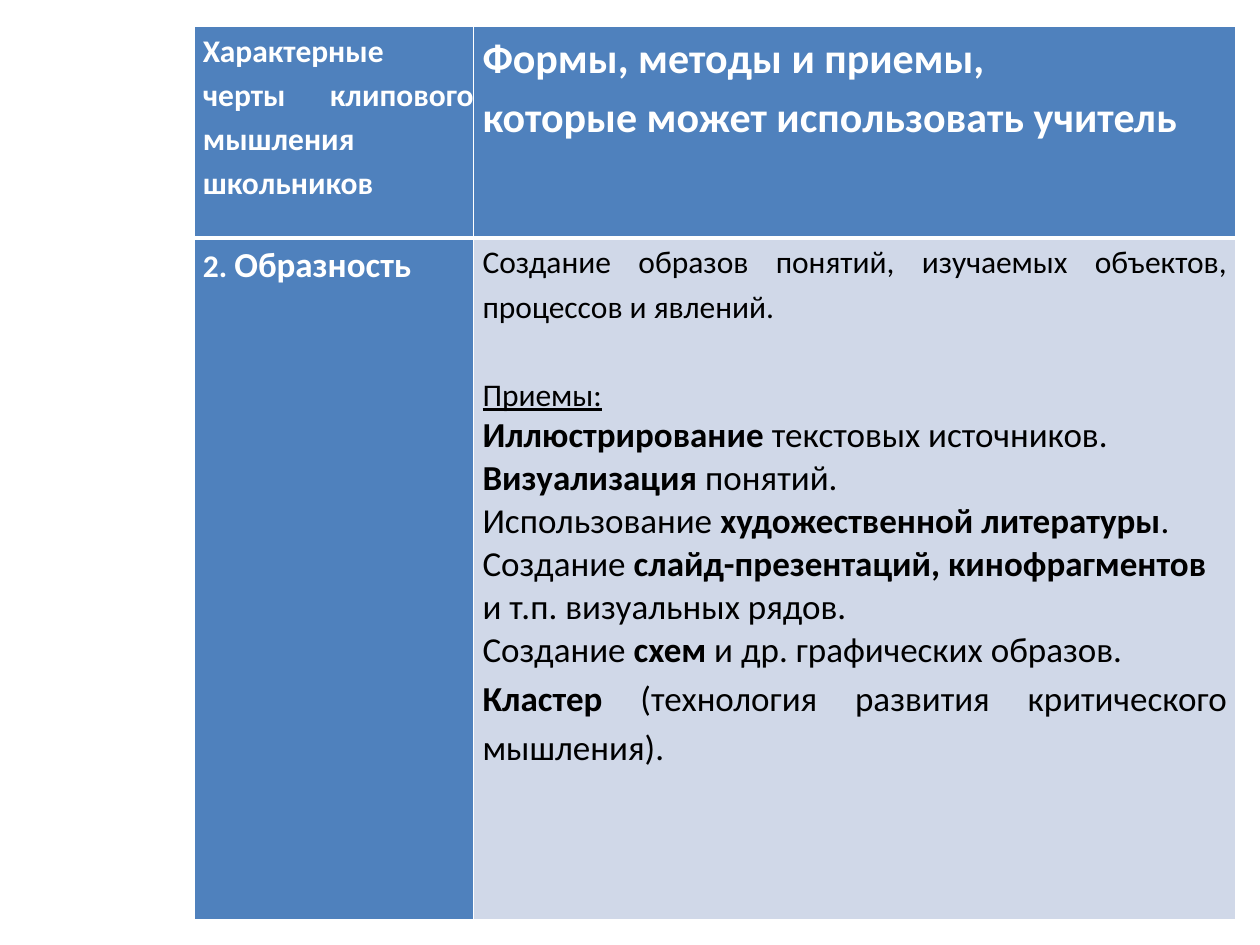
from lxml import etree
from pptx import Presentation
from pptx.dml.color import RGBColor
from pptx.enum import text
from pptx.oxml import ns
from pptx.util import Inches, Pt

BLUE, PALE, WHITE, BLACK = "4F81BD", "D0D8E8", "FFFFFF", "000000"
COLUMNS = (2.22, 6.05)
ROWS = (1.68, 5.41)


def rgb(value):
    return RGBColor.from_string(value)


def add_border(cell, side, width):
    """Draw one white cell edge; side is L, R, T or B."""
    line = etree.SubElement(cell._tc.get_or_add_tcPr(), ns.qn(f"a:ln{side}"),
                            w=str(Pt(width)))
    fill = etree.SubElement(line, ns.qn("a:solidFill"))
    etree.SubElement(fill, ns.qn("a:srgbClr"), val=WHITE)


def style_cell(cell, fill, right, top, bottom):
    for side, width in (("L", 1), ("R", 1), ("T", top), ("B", bottom)):
        add_border(cell, side, width)
    cell.fill.solid()
    cell.fill.fore_color.rgb = rgb(fill)
    cell.margin_left, cell.margin_right = Inches(0.07), Inches(right)
    cell.margin_top = cell.margin_bottom = 0


def add_run(paragraph, content, size=18, color=WHITE, bold=False, underline=False):
    run = paragraph.add_run()
    run.text = content
    font = run.font
    font.name, font.size = "Calibri", Pt(size)
    font.bold, font.underline = bold, underline
    font.color.rgb = rgb(color)


def write_paragraph(cell, *parts, justified=True, before=0, **style):
    """Write a paragraph of plain strings or (string, format) parts."""
    frame = cell.text_frame
    first = frame.paragraphs[0]
    paragraph = frame.add_paragraph() if first.runs else first
    if justified:
        paragraph.alignment = text.PP_ALIGN.JUSTIFY
        paragraph.line_spacing = 1.15
    if before:
        paragraph.space_before = Pt(before)
    for part in parts:
        content, extra = (part, {}) if isinstance(part, str) else part
        add_run(paragraph, content, **{**style, **extra})


def strong(content):
    return content, {"bold": True}


def add_grid(slide):
    table = slide.shapes.add_table(
        len(ROWS), len(COLUMNS), Inches(1.54), Inches(0.21),
        Inches(sum(COLUMNS)), Inches(sum(ROWS))).table
    for column, width in zip(table.columns, COLUMNS):
        column.width = Inches(width)
    for row, height in zip(table.rows, ROWS):
        row.height = Inches(height)
    for r in range(len(ROWS)):
        for c in range(len(COLUMNS)):
            style_cell(table.cell(r, c), PALE if r and c else BLUE,
                       right=0.07 if c else 0,
                       top=3 if r else 1, bottom=1 if r else 3)
    return table


def write_headings(table):
    write_paragraph(table.cell(0, 0),
                    "Характерные черты клипового мышления школьников", bold=True)
    for line in ("Формы, методы и приемы,", "которые может использовать учитель"):
        write_paragraph(table.cell(0, 1), line, size=24, bold=True)
    write_paragraph(table.cell(1, 0), "2. ", ("Образность", {"size": 20}), bold=True)


def write_methods(cell):
    write_paragraph(cell, "Создание образов понятий, изучаемых объектов, "
                    "процессов и явлений.", color=BLACK)
    # One line of space sets the techniques apart
    write_paragraph(cell, "Приемы:", before=25, color=BLACK, underline=True)
    techniques = (
        (strong("Иллюстрирование"), " текстовых источников."),
        (strong("Визуализация"), " понятий."),
        ("Использование ", strong("художественной литературы"), "."),
        ("Создание ", strong("слайд-презентаций, кинофрагментов "),
         "и т.п. визуальных рядов."),
        ("Создание ", strong("схем"), " и др. графических образов."),
    )
    for parts in techniques:
        write_paragraph(cell, *parts, justified=False, size=20, color=BLACK)
    write_paragraph(cell, strong("Кластер"),
                    " (технология развития критического мышления).",
                    size=20, color=BLACK)


def main():
    deck = Presentation()
    deck.slide_width, deck.slide_height = Inches(10), Inches(7.5)
    slide = deck.slides.add_slide(deck.slide_layouts[6])
    table = add_grid(slide)
    write_headings(table)
    write_methods(table.cell(1, 1))
    deck.save("out.pptx")


if __name__ == "__main__":
    main()
